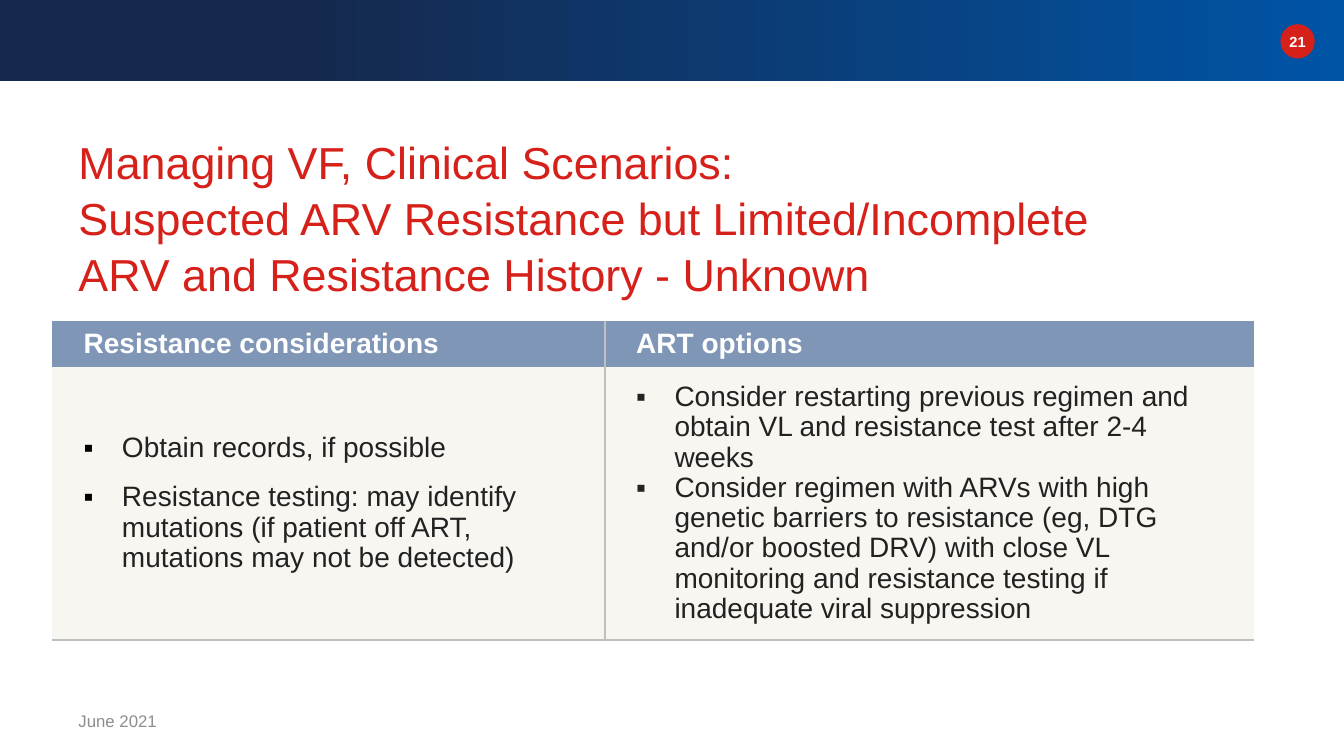
from lxml.etree import SubElement
from pptx import Presentation
from pptx.dml.color import RGBColor
from pptx.enum.shapes import MSO_SHAPE
from pptx.enum.text import MSO_ANCHOR, PP_ALIGN
from pptx.oxml.ns import qn
from pptx.util import Inches, Pt

RED, WHITE, INK = "D6201A", "FFFFFF", "222222"
COLUMNS = [
    ("Resistance considerations", "000000", 13.4, [
        "Obtain records, if possible",
        "Resistance testing: may identify mutations (if patient off ART, "
        "mutations may not be detected)",
    ]),
    ("ART options", INK, 0, [
        "Consider restarting previous regimen and obtain VL and resistance test after 2-4 weeks",
        "Consider regimen with ARVs with high genetic barriers to resistance (eg, DTG and/or "
        "boosted DRV) with close VL monitoring and resistance testing if inadequate viral "
        "suppression",
    ]),
]


def color(value):
    return RGBColor.from_string(value)


class SlideBuilder:
    font_name = "Arial"

    def __init__(self, slide):
        self.slide = slide

    def style(self, paragraph, size, value, bold=False, spacing=1.0):
        paragraph.line_spacing = spacing
        font = paragraph.font
        font.name, font.size, font.bold = self.font_name, Pt(size), bold
        font.color.rgb = color(value)

    def shape(self, kind, left, top, width, height):
        shape = self.slide.shapes.add_shape(
            kind, Inches(left), Inches(top), Inches(width), Inches(height))
        shape.shadow.inherit = False
        shape.line.fill.background()
        return shape

    def gradient_band(self, width, height, stops):
        fill = self.shape(MSO_SHAPE.RECTANGLE, 0, 0, width, height).fill
        fill.gradient()
        fill.gradient_angle = 0
        for stop, (position, value) in zip(fill.gradient_stops, stops):
            stop.position = position
            stop.color.rgb = color(value)

    def disc(self, left, top, diameter, value):
        fill = self.shape(MSO_SHAPE.OVAL, left, top, diameter, diameter).fill
        fill.solid()
        fill.fore_color.rgb = color(value)

    def text(self, content, left, top, width, height, size, value, bold=False,
             spacing=1.0, align=PP_ALIGN.LEFT, anchor=MSO_ANCHOR.MIDDLE, inset=0.05):
        box = self.slide.shapes.add_textbox(
            Inches(left), Inches(top), Inches(width), Inches(height))
        frame = box.text_frame
        frame.word_wrap = True
        frame.vertical_anchor = anchor
        frame.margin_top = Inches(inset)
        paragraph = frame.paragraphs[0]
        paragraph.text = content
        paragraph.alignment = align
        self.style(paragraph, size, value, bold, spacing)

    def borders(self, cell, lines):
        """Draw the sides named in lines (L, R, T, B) and clear the others."""
        properties = cell._tc.get_or_add_tcPr()
        for side in "LRTB":
            line = SubElement(properties, qn(f"a:ln{side}"), w=str(Pt(1)))
            if side in lines:
                fill = SubElement(line, qn("a:solidFill"))
                SubElement(fill, qn("a:srgbClr"), val="BFBFBF")
            else:
                SubElement(line, qn("a:noFill"))

    def cell(self, cell, fill, lines):
        self.borders(cell, lines)
        cell.fill.solid()
        cell.fill.fore_color.rgb = color(fill)
        cell.vertical_anchor = MSO_ANCHOR.MIDDLE
        cell.margin_left = cell.margin_right = Inches(0.31)
        cell.margin_top = cell.margin_bottom = Inches(0.06)
        return cell.text_frame

    def bullet(self, paragraph, value):
        properties = paragraph._p.get_or_add_pPr()
        properties.set("marL", str(Inches(0.38)))
        properties.set("indent", str(-Inches(0.38)))
        bullet_color = SubElement(properties, qn("a:buClr"))
        SubElement(bullet_color, qn("a:srgbClr"), val=value)
        SubElement(properties, qn("a:buFont"), typeface=self.font_name)
        SubElement(properties, qn("a:buChar"), char="▪")

    def table(self, columns, left, top, widths, heights):
        table = self.slide.shapes.add_table(
            2, len(columns), Inches(left), Inches(top),
            Inches(sum(widths)), Inches(sum(heights))).table
        table.first_row = table.horz_banding = False
        for row, height in zip(table.rows, heights):
            row.height = Inches(height)
        for index, (heading, bullet_color, gap, items) in enumerate(columns):
            table.columns[index].width = Inches(widths[index])
            divider = "R" if index == 0 else "L"
            header = self.cell(table.cell(0, index), "8096B6", divider)
            header.text = heading
            self.style(header.paragraphs[0], 20, WHITE, True, 1.02)
            body = self.cell(table.cell(1, index), "F8F6F0", divider + "B")
            body.text = "\n".join(items)
            for paragraph in body.paragraphs:
                self.bullet(paragraph, bullet_color)
                self.style(paragraph, 20, INK, spacing=0.97)
            for paragraph in body.paragraphs[1:]:
                paragraph.space_before = Pt(gap)


def main():
    presentation = Presentation()
    presentation.slide_width = Inches(13.33)
    presentation.slide_height = Inches(7.5)
    builder = SlideBuilder(presentation.slides.add_slide(presentation.slide_layouts[6]))

    builder.gradient_band(13.33, 0.8, [(0.23, "15294E"), (1, "0054A6")])
    builder.disc(12.7, 0.24, 0.34, RED)
    builder.text("21", 12.65, 0.27, 0.44, 0.28, 10.5, WHITE, bold=True,
                 align=PP_ALIGN.CENTER)
    builder.text("Managing VF, Clinical Scenarios:\v"
                 "Suspected ARV Resistance but Limited/Incomplete\v"
                 "ARV and Resistance History - Unknown",
                 0.68, 1.24, 11.5, 1.84, 32, RED, spacing=1.04,
                 anchor=MSO_ANCHOR.TOP, inset=0.08)
    builder.table(COLUMNS, 0.52, 3.18, [5.48, 6.44], [0.45, 2.59])
    builder.text("June 2021", 0.68, 6.95, 3, 0.4, 12, "8D8D8D")

    presentation.save("out.pptx")


if __name__ == "__main__":
    main()
